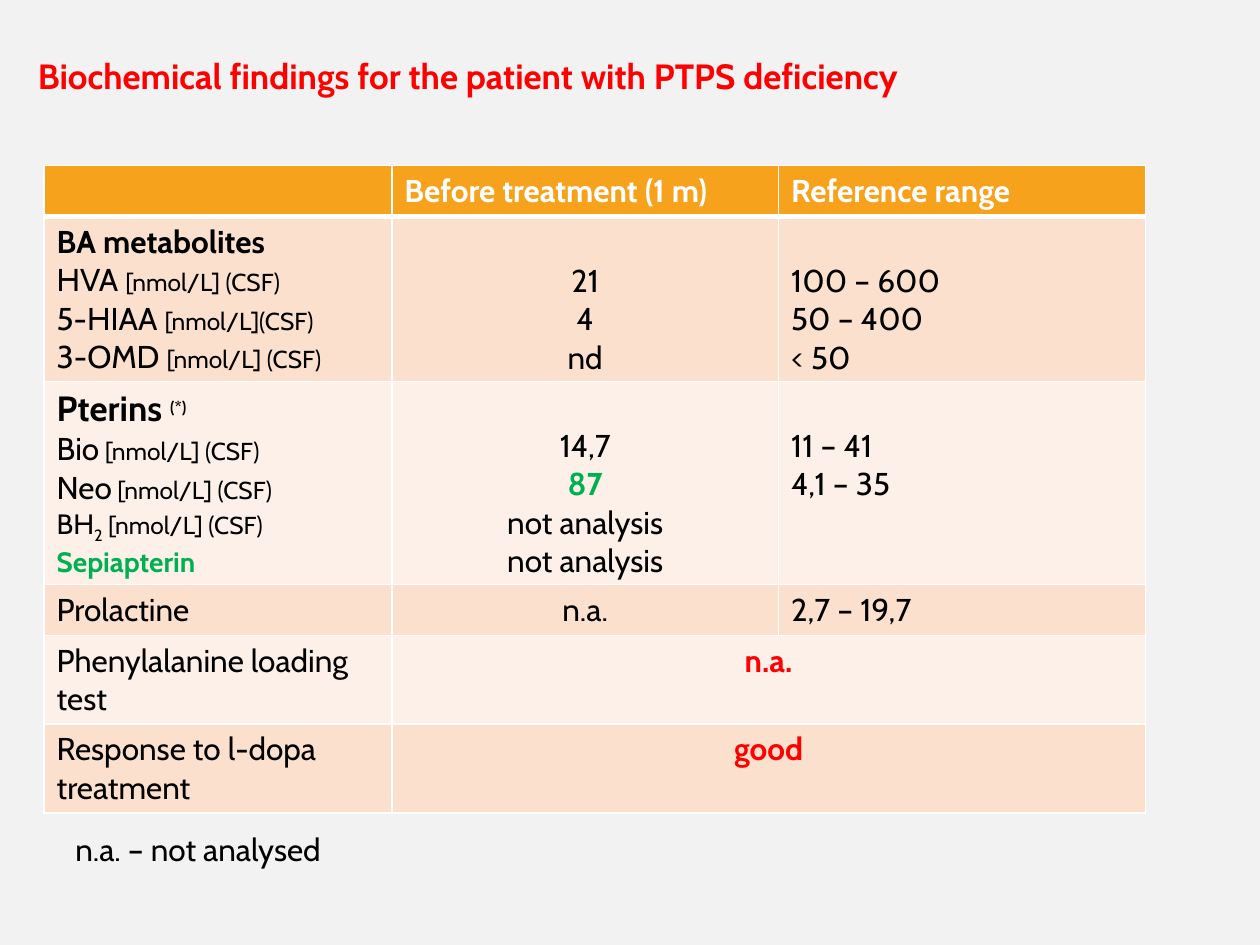
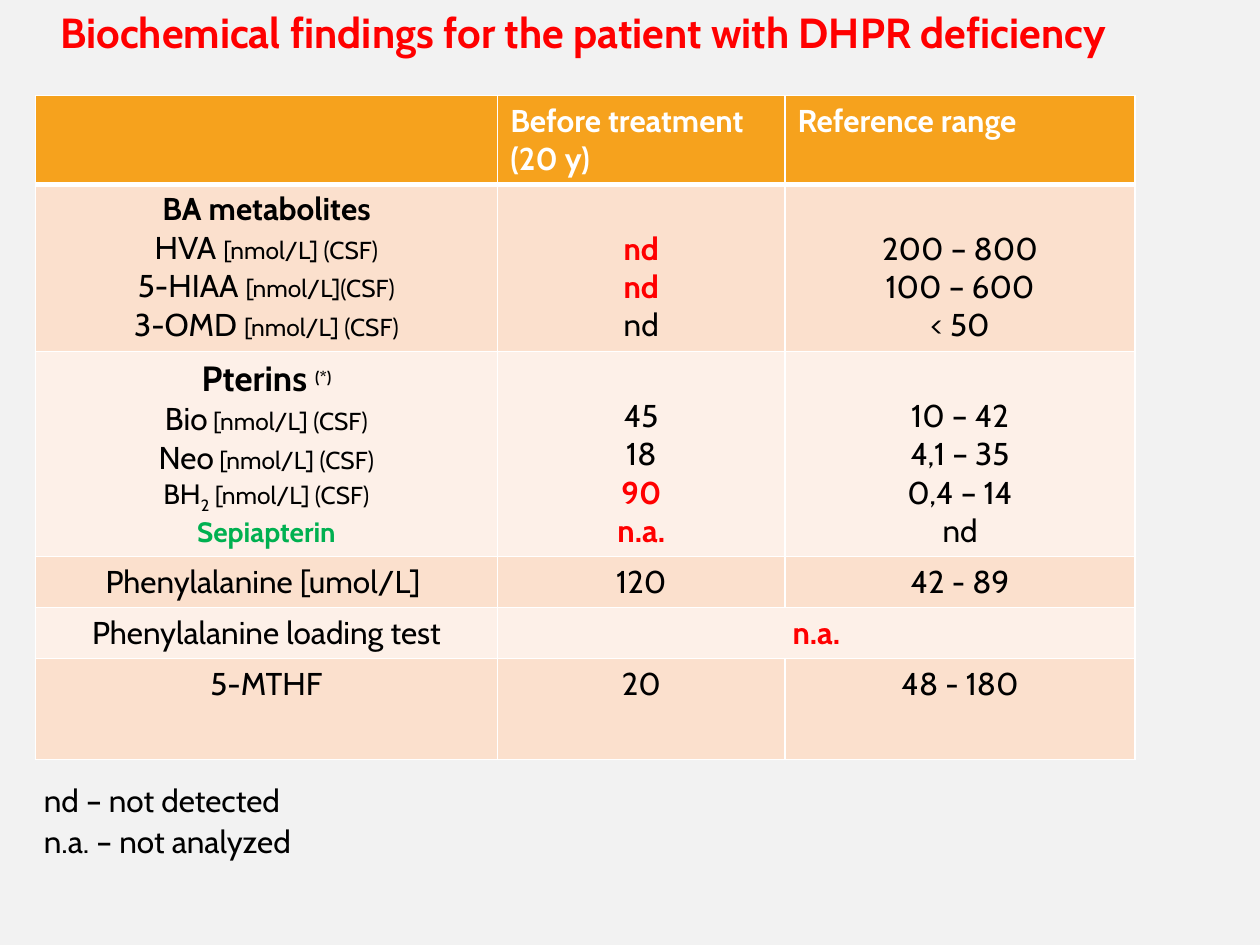
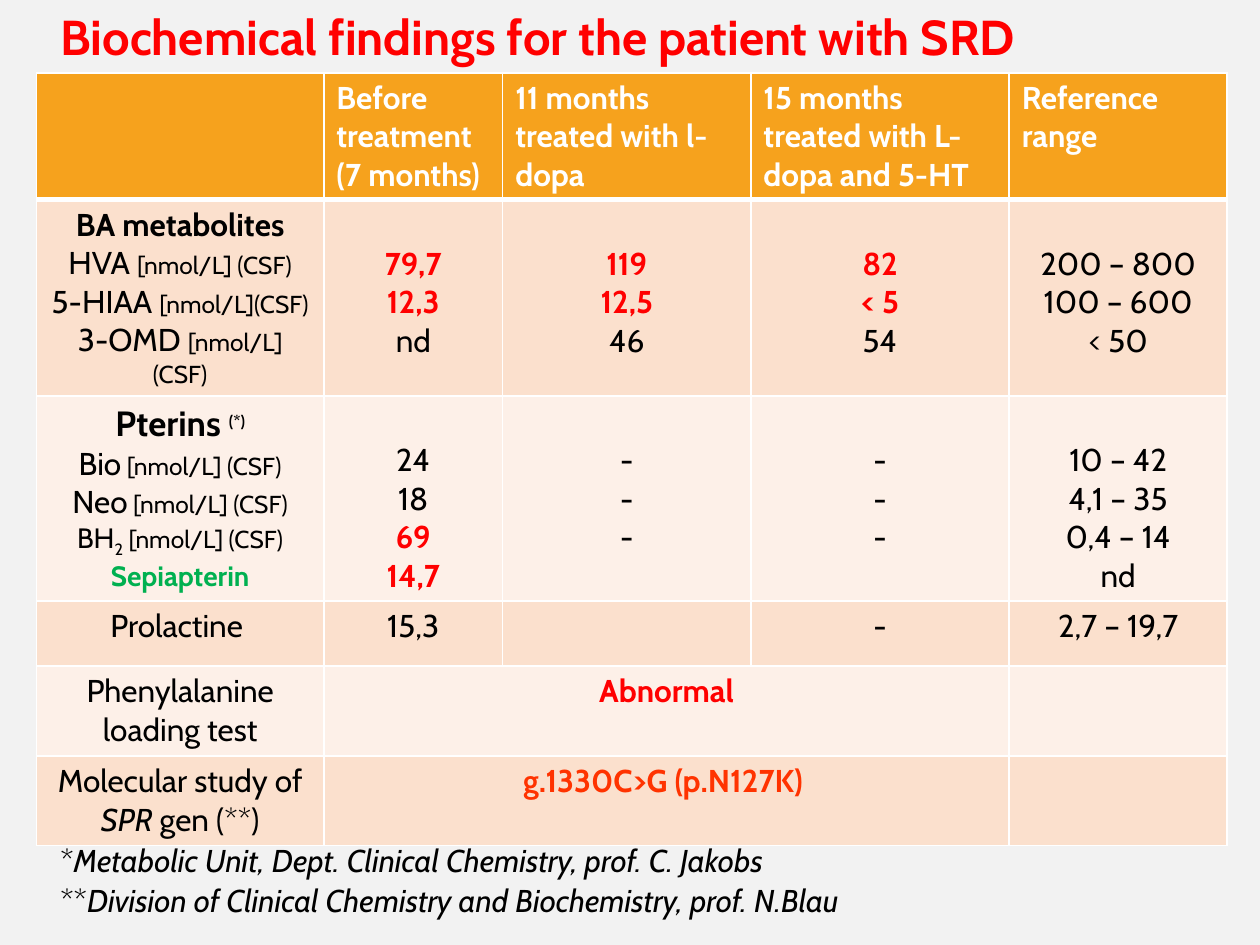
"""Build three slides of biochemical findings, each a title, a table and its notes."""
from lxml.etree import SubElement
from pptx import Presentation
from pptx.dml.color import RGBColor
from pptx.enum.text import MSO_ANCHOR, MSO_AUTO_SIZE, PP_ALIGN
from pptx.oxml.ns import qn
from pptx.util import Inches, Pt

HEADER, BANDS, WHITE = "F6A21D", ("FDF0E8", "FBE0CD"), "FFFFFF"
ALIGN = {"l": PP_ALIGN.LEFT, "c": PP_ALIGN.CENTER}
BASE = {"name": "Cabin", "size": Pt(18), "bold": False, "color": "000000"}
HEAD = {"bold": True, "color": WHITE}
STRONG = {"bold": True}
RED = {"bold": True, "color": "FF0000"}
GREEN = {"bold": True, "color": "00B050"}
ORANGE = {"bold": True, "color": "FF3300"}
ITALIC = {"italic": True}
UNIT = {"size": Pt(14)}
MEDIUM = {"size": Pt(16)}
LINE_BELOW_HEADING = Inches(0.36)

METABOLITES = [
    ("BA metabolites", STRONG),
    [("HVA ", {}), ("[nmol/L] (CSF)", UNIT)],
    [("5-HIAA ", {}), ("[nmol/L](CSF)", UNIT)],
    [("3-OMD ", {}), ("[nmol/L] (CSF)", UNIT)],
]
PTERINS = [
    [("Pterins ", {"size": Pt(20), "bold": True}),
     ("(*)", {"size": Pt(16), "bold": True, "baseline": 30})],
    [("Bio", {}), (" [nmol/L] (CSF)", UNIT)],
    [("Neo", {}), (" [nmol/L] (CSF)", UNIT)],
    [("BH", MEDIUM), ("2", {"size": Pt(16), "baseline": -25}), (" [nmol/L] (CSF)", UNIT)],
    ("Sepiapterin", {**GREEN, **MEDIUM}),
]
METABOLITE_RANGES = ["200 – 800", "100 – 600", "< 50"]
PTERIN_RANGES = ["10 – 42", "4,1 – 35", "0,4 – 14", "nd"]
DASHES = ["-", "-", "-"]

# Places, columns and rows are percentages of the slide's width and height.
FINDINGS = [
    {
        "title": "Biochemical findings for the patient with PTPS deficiency",
        "title_size": 20, "title_place": (2, 5.1, 79.3, 5.9),
        "corner": (3.5, 17.5), "aligns": "lcl",
        "columns": (27.6, 30.7, 29.1), "rows": (5.4, 17.2, 21.4, 5.4, 9.4, 9.4),
        "cells": [
            ["", "Before treatment (1 m)", "Reference range"],
            [METABOLITES, ["21", "4", "nd"], ["100 – 600", "50 – 400", "< 50"]],
            [PTERINS, ["14,7", ("87", GREEN), "not analysis", "not analysis"],
             ["11 – 41", "4,1 – 35"]],
            ["Prolactine", "n.a.", "2,7 – 19,7"],
            ["Phenylalanine loading test", ("n.a.", RED), None],
            ["Response to l-dopa treatment", ("good", RED), None],
        ],
        "notes": ["n.a. – not analysed"], "notes_place": (5, 87.2, 23.4, 5.3),
        "notes_spacing": {},
    },
    {
        "title": "Biochemical findings for the patient with DHPR deficiency",
        "title_size": 24, "title_place": (3.8, 0, 92.7, 6.7),
        "corner": (2.8, 10.1), "aligns": "ccc",
        "columns": (36.7, 22.8, 27.8), "rows": (9.4, 17.7, 21.7, 5.4, 5.4, 10.7),
        "cells": [
            ["", "Before treatment (20 y)", "Reference range"],
            [METABOLITES, [("nd", RED), ("nd", RED), "nd"], METABOLITE_RANGES],
            [PTERINS, ["45", "18", ("90", RED), ("n.a.", RED)], PTERIN_RANGES],
            ["Phenylalanine [umol/L] ", "120", "42 - 89"],
            ["Phenylalanine loading test", ("n.a.", RED), None],
            ["5-MTHF", "20", "48 - 180"],
        ],
        "notes": ["nd – not detected", "n.a. – not analyzed"],
        "notes_place": (2.5, 82.5, 81.1, 13.9),
        "notes_spacing": {"line_spacing": 0.9, "space_before": Pt(3.6)},
    },
    {
        "title": "Biochemical findings for the patient with SRD",
        "title_size": 28, "title_place": (3.8, 0, 92.7, 7.6),
        "corner": (2.9, 7.7), "aligns": "ccccc",
        "columns": (22.8, 14.2, 19.7, 20.5, 17.3), "rows": (13.4, 20.8, 21.7, 6.9, 9.5, 9.5),
        "cells": [
            ["", "Before treatment (7 months)", "11 months treated with l-dopa",
             "15 months treated with L-dopa and 5-HT", "Reference range"],
            [METABOLITES, [("79,7", RED), ("12,3", RED), "nd"],
             [("119", RED), ("12,5", RED), "46"],
             [("82", RED), ("< 5", RED), "54"], METABOLITE_RANGES],
            [PTERINS, ["24", "18", ("69", RED), ("14,7", RED)], DASHES, DASHES, PTERIN_RANGES],
            ["Prolactine ", "15,3", "", "-", "2,7 – 19,7"],
            ["Phenylalanine loading test", ("Abnormal", RED), None, None, ""],
            [[[("Molecular study of ", {}), ("SPR", ITALIC), (" gen (**)", {})]],
             ("g.1330C>G (p.N127K) ", ORANGE), None, None, ""],
        ],
        "notes": [
            [("*", {}), ("Metabolic Unit, Dept. Clinical Chemistry, prof. C. Jakobs", ITALIC)],
            [("**", {}),
             ("Division of Clinical Chemistry and Biochemistry, prof. N.Blau", ITALIC)],
        ],
        "notes_place": (3.8, 88.8, 81.1, 13.9),
        "notes_spacing": {"line_spacing": 0.9, "space_before": Pt(3.6)},
    },
]


def color(value):
    """Turn a hex string into a colour."""
    return RGBColor.from_string(value)


def write(frame, lines, style, spacing):
    """Write lines of styled runs into a text frame."""
    for number, line in enumerate(lines if isinstance(lines, list) else [lines]):
        para = frame.add_paragraph() if number else frame.paragraphs[0]
        for name, value in spacing.items():
            setattr(para, name, value)
        line = (line, {}) if isinstance(line, str) else line
        for text, extra in line if isinstance(line, list) else [line]:
            if not text:
                continue
            span = para.add_run()
            span.text = text
            look = {**BASE, **style, **extra}
            span.font.color.rgb = color(look.pop("color"))
            baseline = look.pop("baseline", 0)
            if baseline:
                span._r.get_or_add_rPr().set("baseline", str(baseline * 1000))
            for name, value in look.items():
                setattr(span.font, name, value)


deck = Presentation()
deck.slide_width, deck.slide_height = Inches(10), Inches(7.5)
across, down = deck.slide_width // 1000, deck.slide_height // 1000
background = deck.slide_master.background.fill
background.solid()
background.fore_color.rgb = color("F2F2F2")

for finding in FINDINGS:
    page = deck.slides.add_slide(deck.slide_layouts[5])
    columns, rows = finding["columns"], finding["rows"]
    left, top = finding["corner"]
    corner_and_size = (left, top, sum(columns), sum(rows))
    places = [
        [round(share * 10) * unit for share, unit in zip(place, (across, down, across, down))]
        for place in (finding["title_place"], corner_and_size, finding["notes_place"])
    ]

    title = page.shapes.title
    notes = page.shapes.add_textbox(*places[2])
    for name, value in zip(("left", "top", "width", "height"), places[0]):
        setattr(title, name, value)
    for box in (title, notes):
        frame = {"word_wrap": box.width > deck.slide_width * 0.8,
                 "auto_size": MSO_AUTO_SIZE.SHAPE_TO_FIT_TEXT,
                 "vertical_anchor": MSO_ANCHOR.TOP}
        for name, value in frame.items():
            setattr(box.text_frame, name, value)
    write(title.text_frame, finding["title"], {**RED, "size": Pt(finding["title_size"])},
          {"alignment": PP_ALIGN.LEFT})
    write(notes.text_frame, finding["notes"], {}, finding["notes_spacing"])

    table = page.shapes.add_table(len(rows), len(columns), *places[1]).table
    for column, share in zip(table.columns, columns):
        column.width = round(share * 10) * across
    for row, share in zip(table.rows, rows):
        row.height = round(share * 10) * down

    for row_number, values in enumerate(finding["cells"]):
        for column_number, value in enumerate(values):
            cell = table.cell(row_number, column_number)
            heading = row_number == 0
            properties = cell._tc.get_or_add_tcPr()
            for side in "LRTB":
                thick = (side, row_number) in (("B", 0), ("T", 1))
                border = SubElement(properties, qn(f"a:ln{side}"), w=str(Pt(3 if thick else 1)))
                paint = SubElement(border, qn("a:solidFill"))
                SubElement(paint, qn("a:srgbClr"), val=WHITE)
            cell.fill.solid()
            cell.fill.fore_color.rgb = color(HEADER if heading else BANDS[row_number % 2])
            if value is None:
                continue
            if row_number in (1, 2) and column_number:
                cell.margin_top = LINE_BELOW_HEADING
            align = "l" if heading else finding["aligns"][column_number]
            write(cell.text_frame, value, HEAD if heading else {}, {"alignment": ALIGN[align]})
            span_end = column_number
            while span_end + 1 < len(values) and values[span_end + 1] is None:
                span_end += 1
            if span_end > column_number:
                cell.merge(table.cell(row_number, span_end))

deck.save("out.pptx")
